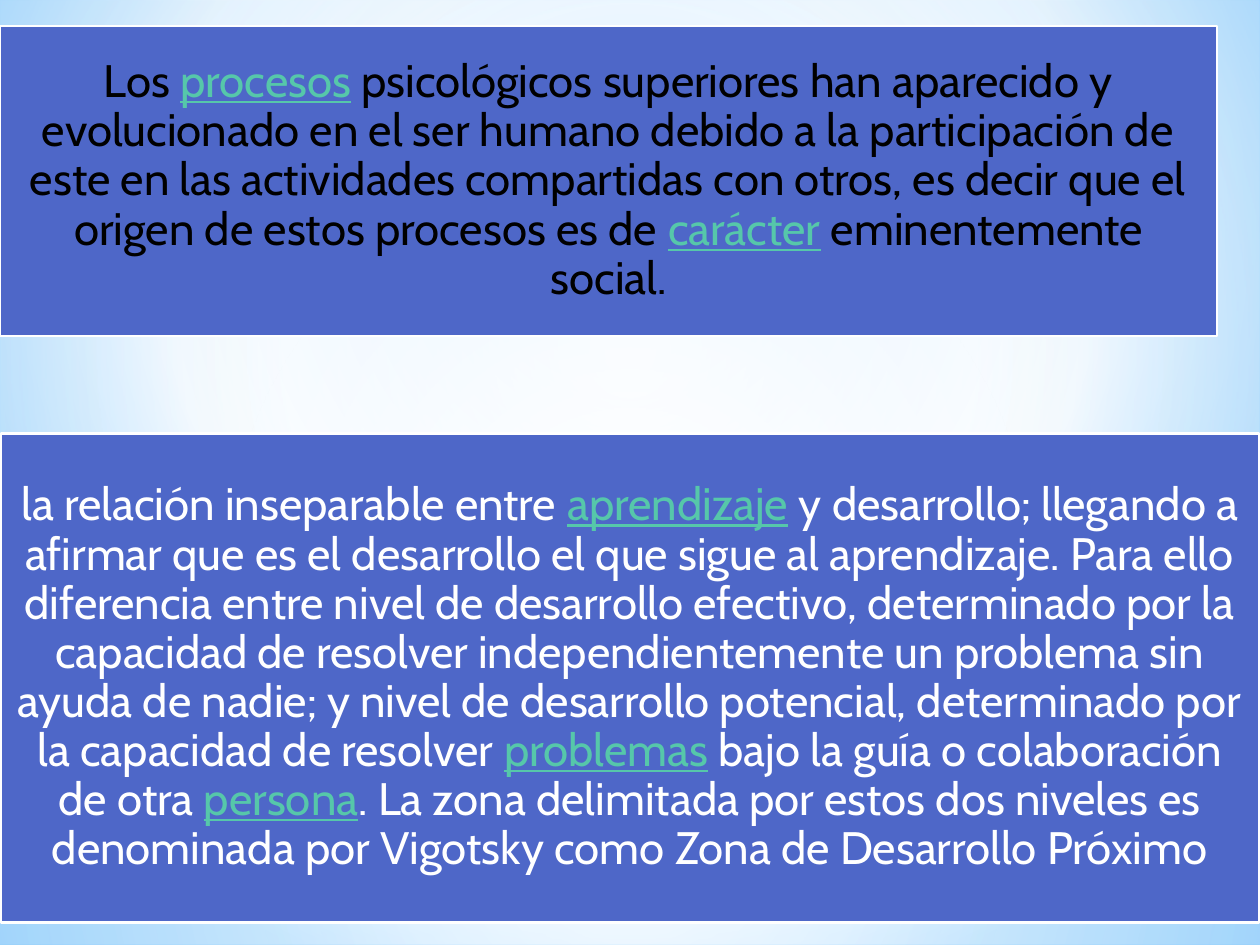
from dataclasses import dataclass

from lxml import etree
from pptx import Presentation
from pptx.dml.color import RGBColor
from pptx.enum.shapes import MSO_SHAPE
from pptx.enum.text import MSO_ANCHOR, PP_ALIGN
from pptx.oxml.ns import qn
from pptx.util import Cm, Pt

RECTANGLE, ELLIPSE = MSO_SHAPE.RECTANGLE, MSO_SHAPE.OVAL
MIDDLE, CENTER = MSO_ANCHOR.MIDDLE, PP_ALIGN.CENTER
BLANK_LAYOUT = 6
CENTERED = (50, 50, 50, 50)


@dataclass(frozen=True)
class Theme:
    font: str = "Cabin"
    body_size: int = 26
    line_width: float = 1.25
    panel: str = "4E67C8"
    highlight: str = "56C7AA"
    black: str = "000000"
    white: str = "FFFFFF"
    mist: str = "B4DCFA"
    sky: str = "9ED5FF"
    deep_sky: str = "5BB9FF"


THEME = Theme()

# Stops are (position %, colour, opacity %).
BACKGROUND_STOPS = [(0, THEME.sky, 100), (60, THEME.white, 100), (100, THEME.deep_sky, 100)]

# Glow layers: shape, (left, top, width, height) in cm, stops, focus (None is vertical).
GLOWS = [
    (RECTANGLE, (0, 14.17, 25.4, 4.88),
     [(0, THEME.white, 91), (37, THEME.white, 76), (100, THEME.mist, 79)], CENTERED),
    (RECTANGLE, (0, 0, 25.4, 14.17),
     [(0, THEME.white, 89), (48, THEME.white, 62), (100, THEME.mist, 79)], CENTERED),
    (RECTANGLE, (0, 10.46, 25.4, 6.35),
     [(0, THEME.white, 0), (29, THEME.white, 30), (45, THEME.mist, 40),
      (55, THEME.white, 26), (65, THEME.mist, 60), (100, THEME.white, 0)], None),
    (ELLIPSE, (0, 4.45, 25.4, 14.17),
     [(0, THEME.white, 100), (56, THEME.white, 0)], CENTERED),
]

# Panels: box in cm, text colour, text with highlighted words between asterisks.
PANELS = [
    ((0, 0.53, 24.54, 6.25), THEME.black,
     "Los *procesos* psicológicos superiores han aparecido y evolucionado en el ser "
     "humano debido a la participación de este en las actividades compartidas con otros, "
     "es decir que el origen de estos procesos es de *carácter* eminentemente social."),
    ((0.02, 8.74, 25.37, 9.86), THEME.white,
     "la relación inseparable entre *aprendizaje* y desarrollo; llegando a afirmar que es "
     "el desarrollo el que sigue al aprendizaje. Para ello diferencia entre nivel de "
     "desarrollo efectivo, determinado por la capacidad de resolver independientemente un "
     "problema sin ayuda de nadie; y nivel de desarrollo potencial, determinado por la "
     "capacidad de resolver *problemas* bajo la guía o colaboración de otra *persona*. "
     "La zona delimitada por estos dos niveles es denominada por Vigotsky como Zona de "
     "Desarrollo Próximo"),
]


def set_attributes(target, values):
    for name, value in values.items():
        setattr(target, name, value)


def apply_gradient(fill, parent, stops, focus):
    """Fill with a gradient: circular around focus, or vertical without one."""
    fill.solid()
    gradient = etree.Element(qn("a:gradFill"), rotWithShape="1")
    stop_list = etree.SubElement(gradient, qn("a:gsLst"))
    for position, color, opacity in stops:
        stop = etree.SubElement(stop_list, qn("a:gs"), pos=str(position * 1000))
        stop_color = etree.SubElement(stop, qn("a:srgbClr"), val=color)
        if opacity < 100:
            etree.SubElement(stop_color, qn("a:alpha"), val=str(opacity * 1000))
    if focus:
        circle = etree.SubElement(gradient, qn("a:path"), {"path": "circle"})
        sides = {side: str(value * 1000) for side, value in zip("ltrb", focus)}
        etree.SubElement(circle, qn("a:fillToRect"), sides)
    else:
        etree.SubElement(gradient, qn("a:lin"), ang="5400000", scaled="0")
    parent.replace(parent.find(qn("a:solidFill")), gradient)


def add_plain_shape(slide, kind, box):
    shape = slide.shapes.add_shape(kind, *map(Cm, box))
    shape.shadow.inherit = False
    return shape


def add_background(slide):
    fill = slide.background.fill
    fill.solid()
    properties = next(slide.element.iter(qn("p:bgPr")))
    apply_gradient(fill, properties, BACKGROUND_STOPS, (20, 10, 20, 60))


def add_glow(slide, kind, box, stops, focus):
    shape = add_plain_shape(slide, kind, box)
    shape.line.fill.background()
    apply_gradient(shape.fill, shape.element.spPr, stops, focus)


def add_panel(slide, box, text_color, text):
    shape = add_plain_shape(slide, RECTANGLE, box)
    shape.fill.solid()
    shape.fill.fore_color.rgb = RGBColor.from_string(THEME.panel)
    shape.line.color.rgb = RGBColor.from_string(THEME.white)
    shape.line.width = Pt(THEME.line_width)

    frame = shape.text_frame
    margins = {f"margin_{side}": Cm(0.28) for side in ("left", "top", "right", "bottom")}
    set_attributes(frame, {"word_wrap": True, "vertical_anchor": MIDDLE, **margins})
    paragraph = frame.paragraphs[0]
    set_attributes(paragraph, {"alignment": CENTER, "line_spacing": 0.9})
    for index, part in enumerate(text.split("*")):
        highlighted = index % 2 == 1
        run = paragraph.add_run()
        run.text = part
        set_attributes(run.font, {"name": THEME.font, "size": Pt(THEME.body_size),
                                  "underline": highlighted})
        color = THEME.highlight if highlighted else text_color
        run.font.color.rgb = RGBColor.from_string(color)


def main():
    presentation = Presentation()
    set_attributes(presentation, {"slide_width": Cm(25.4), "slide_height": Cm(19.05)})
    slide = presentation.slides.add_slide(presentation.slide_layouts[BLANK_LAYOUT])
    add_background(slide)
    for glow in GLOWS:
        add_glow(slide, *glow)
    for panel in PANELS:
        add_panel(slide, *panel)
    presentation.save("out.pptx")


if __name__ == "__main__":
    main()
